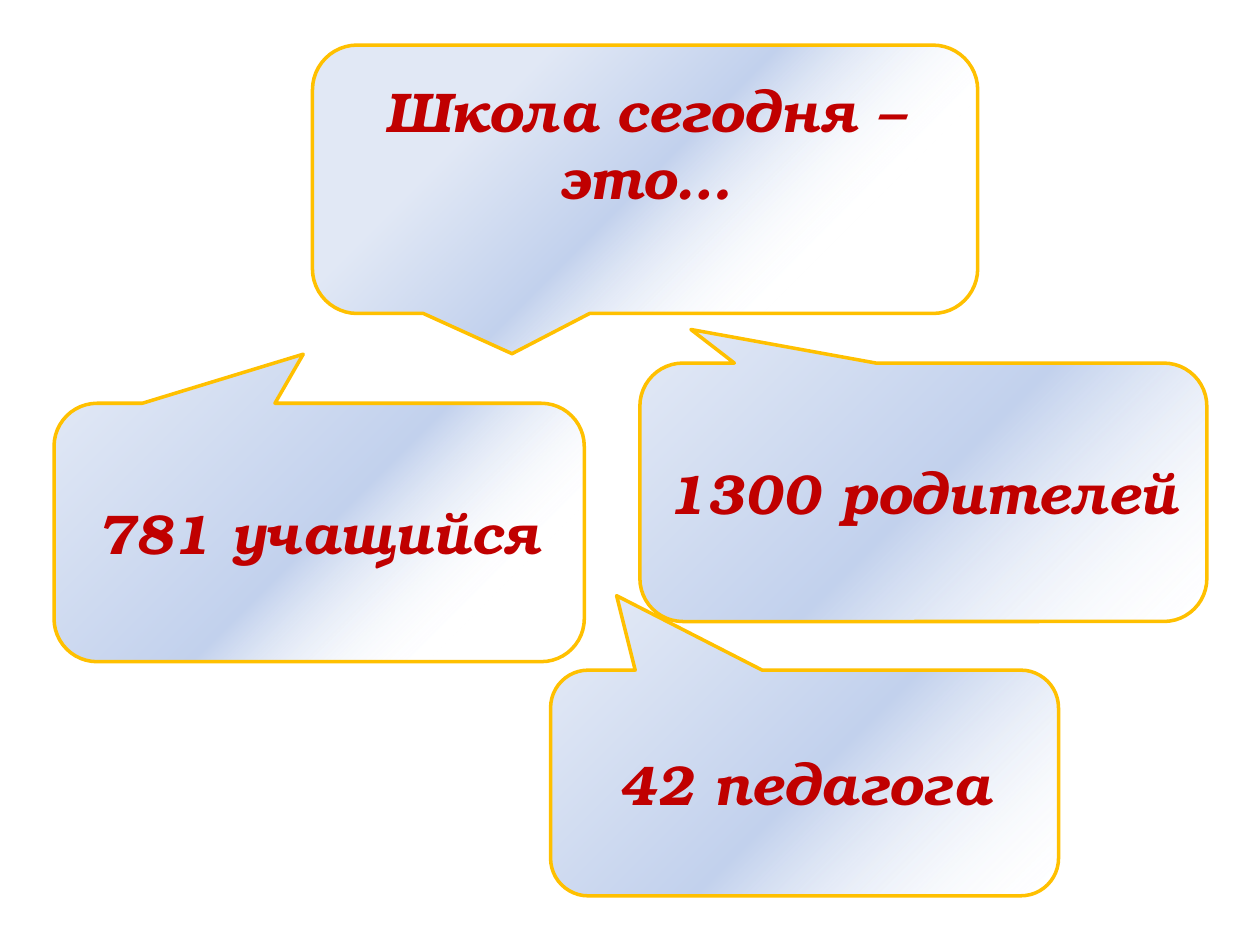
from pptx import Presentation
from pptx.dml.color import RGBColor as RGB
from pptx.enum.shapes import MSO_SHAPE as Shape
from pptx.enum.text import MSO_ANCHOR as Anchor, PP_ALIGN as Align
from pptx.oxml import parse_xml
from pptx.oxml.ns import nsdecls
from pptx.util import Cm, Pt

FONT = "TeX Gyre Bonum"
RED, GOLD = "C00000", "FFC000"
WHITE, BLUE, PALE = "FFFFFF", "C2D1ED", "E1E8F5"

# Text, box (left, top, width, height in cm), tail tip (x, y),
# gradient start and end (%), bottom inset (cm)
CALLS = [
    ("Школа сегодня – это…", (6.3, 0.91, 13.41, 5.41), (-0.2, 0.65), (23, 74), 1.55),
    ("781 учащийся", (1.09, 8.13, 10.69, 5.21), (-0.03, -0.69), (20, 100), 0.13),
    ("1300 родителей", (12.9, 7.32, 11.43, 5.21), (-0.41, -0.63), (0, 100), 0.13),
    ("42 педагога", (11.1, 13.51, 10.24, 4.55), (-0.37, -0.83), (0, 100), 0.13),
]


def color(code):
    return RGB.from_string(code)


def shade(shape, first, last):
    """Fill with a gradient that fades out towards the bottom right corner."""
    stops = [(first, WHITE, '<a:alpha val="0"/>'), (50, BLUE, ""), (last, PALE, "")]
    body = "".join(
        f'<a:gs pos="{pos * 1000}"><a:srgbClr val="{code}">{alpha}</a:srgbClr></a:gs>'
        for pos, code, alpha in stops
    )
    grad = parse_xml(
        f'<a:gradFill {nsdecls("a")} rotWithShape="1"><a:gsLst>{body}</a:gsLst>'
        '<a:path path="circle"><a:fillToRect l="100000" t="100000"/></a:path>'
        "</a:gradFill>"
    )
    shape._element.spPr.prstGeom.addnext(grad)


def write(shape, text, base):
    frame = shape.text_frame
    frame.word_wrap = True
    frame.vertical_anchor = Anchor.MIDDLE
    frame.margin_bottom = Cm(base)
    para = frame.paragraphs[0]
    para.alignment = Align.CENTER
    run = para.add_run()
    run.text = text
    font = run.font
    font.name, font.size = FONT, Pt(32)
    font.bold = font.italic = True
    font.color.rgb = color(RED)


def add_call(slide, text, box, tip, fade, base):
    shape = slide.shapes.add_shape(
        Shape.ROUNDED_RECTANGULAR_CALLOUT, *(Cm(n) for n in box)
    )
    shape.adjustments[0], shape.adjustments[1] = tip
    shape.shadow.inherit = False
    shade(shape, *fade)
    shape.line.color.rgb = color(GOLD)
    shape.line.width = Pt(2)
    write(shape, text, base)


def main():
    deck = Presentation()
    deck.slide_width, deck.slide_height = Cm(25.4), Cm(19.05)
    slide = deck.slides.add_slide(deck.slide_layouts[6])
    # Heading callout first, then the three figures
    for call in CALLS:
        add_call(slide, *call)
    deck.save("out.pptx")


if __name__ == "__main__":
    main()
